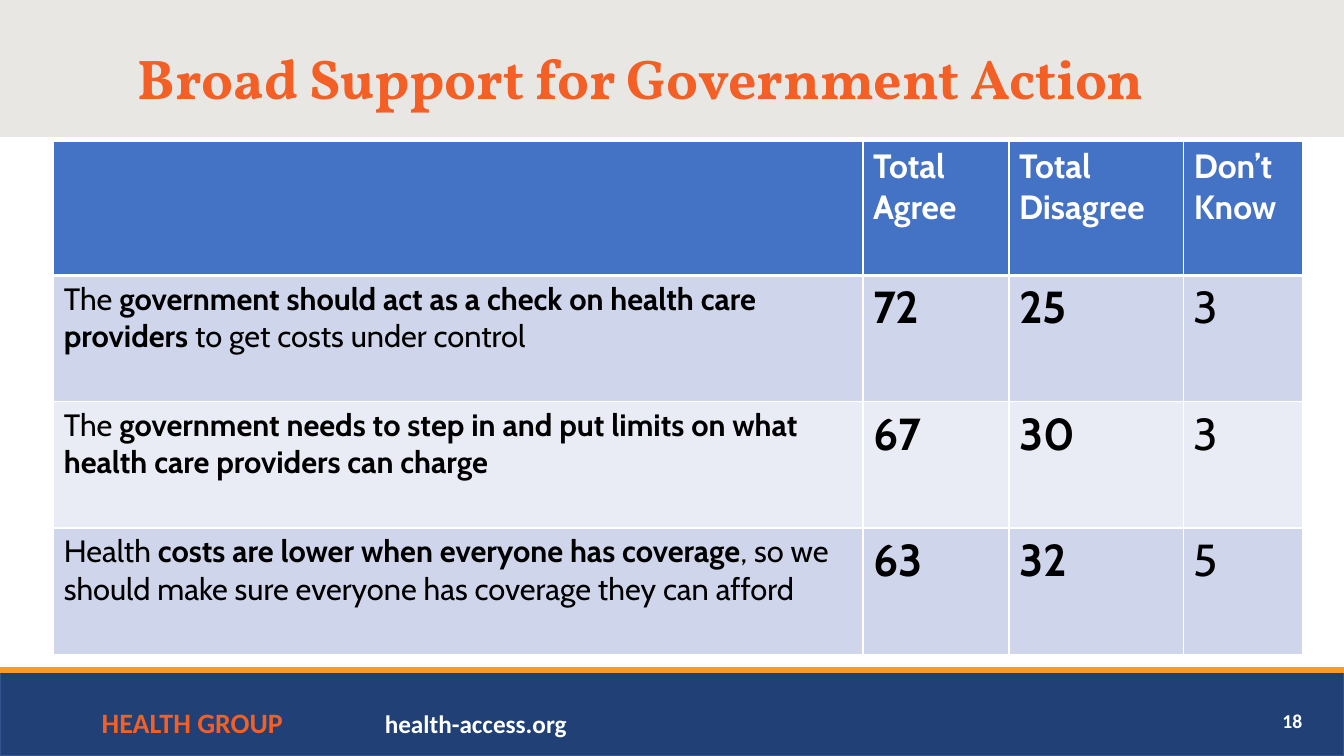
import pptx
import pptx.dml.color
import pptx.enum.shapes
import pptx.enum.text
import pptx.oxml
import pptx.oxml.ns
import pptx.util
from pptx.util import Pt

ALIGN = pptx.enum.text.PP_ALIGN
ANCHOR = pptx.enum.text.MSO_ANCHOR

COLORS = {
    "orange": "F35F24",
    "rule": "F99926",
    "navy": "204076",
    "navy_edge": "325491",
    "band": "E8E7E4",
    "header": "4472C4",
    "row_dark": "CFD5EA",
    "row_light": "E9EBF5",
    "white": "FFFFFF",
    "black": "000000",
}

COLUMN_WIDTHS = [578, 104.3, 124.9, 84.8]
ROW_HEIGHTS = [95.8, 90.2, 90.2, 90.2]
HEADINGS = ["", "Total Agree", "Total\nDisagree", "Don’t Know"]

# Each statement is a list of (text, bold) runs, followed by its three results
STATEMENTS = [
    ([("The ", False),
      ("government should act as a check on health care providers ", True),
      ("to get costs under control", False)], 72, 25, 3),
    ([("The ", False),
      ("government needs to step in and put limits on what "
       "health care providers can charge", True)], 67, 30, 3),
    ([("Health ", False),
      ("costs are lower when everyone has coverage", True),
      (", so we should make sure everyone has coverage they can afford", False)],
     63, 32, 5),
]


def rgb(name):
    return pptx.dml.color.RGBColor.from_string(COLORS[name])


def write_text(text_frame, text, size, color, font="Cabin", bold=True,
               align=ALIGN.LEFT, line_spacing=None):
    """Write a string, one paragraph per line, or a list of (text, bold) runs."""
    lines = [[(line, bold)] for line in text.split("\n")] if isinstance(text, str) else [text]
    for index, runs in enumerate(lines):
        paragraph = text_frame.add_paragraph() if index else text_frame.paragraphs[0]
        paragraph.alignment = align
        if line_spacing:
            paragraph.line_spacing = line_spacing
        for run_text, run_bold in runs:
            run = paragraph.add_run()
            run.text = run_text
            run.font.name = font
            run.font.size = Pt(size)
            run.font.bold = run_bold
            run.font.color.rgb = rgb(color)


def add_band(slide, top, height, fill, edge=None):
    band = slide.shapes.add_shape(
        pptx.enum.shapes.MSO_SHAPE.RECTANGLE, 0, Pt(top), Pt(960), Pt(height))
    band.shadow.inherit = False
    band.fill.solid()
    band.fill.fore_color.rgb = rgb(fill)
    if edge:
        band.line.color.rgb = rgb(edge)
        band.line.width = Pt(1)
    else:
        band.line.fill.background()


def add_rule(slide, top):
    rule = slide.shapes.add_connector(
        pptx.enum.shapes.MSO_CONNECTOR.STRAIGHT, 0, Pt(top), Pt(960), Pt(top))
    rule.line.color.rgb = rgb("rule")
    rule.line.width = Pt(4.5)
    rule._element.spPr.append(pptx.oxml.parse_xml(
        f"<a:effectLst {pptx.oxml.ns.nsdecls('a')}/>"))


def add_label(slide, left, top, width, height, text, anchor=ANCHOR.TOP, **text_format):
    label = slide.shapes.add_textbox(Pt(left), Pt(top), Pt(width), Pt(height))
    label.text_frame.word_wrap = True
    label.text_frame.vertical_anchor = anchor
    write_text(label.text_frame, text, font="Calibri", **text_format)


def set_title(slide, text):
    title = slide.shapes.title
    title.left, title.top, title.width, title.height = Pt(-22.3), Pt(5.8), Pt(960), Pt(104.4)
    title.text_frame.vertical_anchor = ANCHOR.MIDDLE
    write_text(title.text_frame, text, size=40, color="orange", font="Vollkorn",
               align=ALIGN.CENTER, line_spacing=0.9)


def style_cell(cell, fill, top_border, bottom_border):
    borders = {"lnL": 1, "lnR": 1, "lnT": top_border, "lnB": bottom_border}
    properties = cell._tc.get_or_add_tcPr()
    for tag, width in borders.items():
        properties.append(pptx.oxml.parse_xml(
            f"<a:{tag} {pptx.oxml.ns.nsdecls('a')} w=\"{Pt(width)}\"><a:solidFill>"
            f"<a:srgbClr val=\"{COLORS['white']}\"/></a:solidFill></a:{tag}>"))
    cell.fill.solid()
    cell.fill.fore_color.rgb = rgb(fill)


def add_results_table(slide):
    table = slide.shapes.add_table(
        len(ROW_HEIGHTS), len(COLUMN_WIDTHS), Pt(38.4), Pt(101),
        Pt(sum(COLUMN_WIDTHS)), Pt(sum(ROW_HEIGHTS))).table
    for column, width in zip(table.columns, COLUMN_WIDTHS):
        column.width = Pt(width)
    for row, height in zip(table.rows, ROW_HEIGHTS):
        row.height = Pt(height)

    # Header row
    for cell, heading in zip(table.rows[0].cells, HEADINGS):
        style_cell(cell, "header", 1, 3)
        if heading:
            write_text(cell.text_frame, heading, size=24, color="white")

    # Statements with their percentages; the last column is not bold
    for number, (statement, *results) in enumerate(STATEMENTS, start=1):
        cells = list(table.rows[number].cells)
        for cell in cells:
            style_cell(cell, "row_dark" if number % 2 else "row_light",
                       3 if number == 1 else 1, 1)
        write_text(cells[0].text_frame, statement, size=22, color="black")
        for cell, result in zip(cells[1:], results):
            write_text(cell.text_frame, str(result), size=32, color="black",
                       bold=cell is not cells[-1])


def main():
    presentation = pptx.Presentation()
    presentation.slide_width, presentation.slide_height = Pt(960), Pt(540)
    slide = presentation.slides.add_slide(presentation.slide_layouts[5])

    # Footer and title bands, with the title moved in front of them
    add_band(slide, 478.8, 61.2, "navy", edge="navy_edge")
    add_rule(slide, 478.8)
    add_band(slide, 0, 97.9, "band")
    slide.shapes._spTree.append(slide.shapes.title._element)
    set_title(slide, "Broad Support for Government Action")

    # Footer labels
    add_label(slide, 65.5, 500.4, 436, 31.7, "HEALTH GROUP", size=20, color="orange")
    add_label(slide, 267.8, 502.6, 322.6, 30, "health-access.org", size=18, color="white")
    add_label(slide, 721.4, 500.4, 216, 28.8, "18", size=14, color="white",
              align=ALIGN.RIGHT, anchor=ANCHOR.MIDDLE)

    add_results_table(slide)
    presentation.save("out.pptx")


if __name__ == "__main__":
    main()
